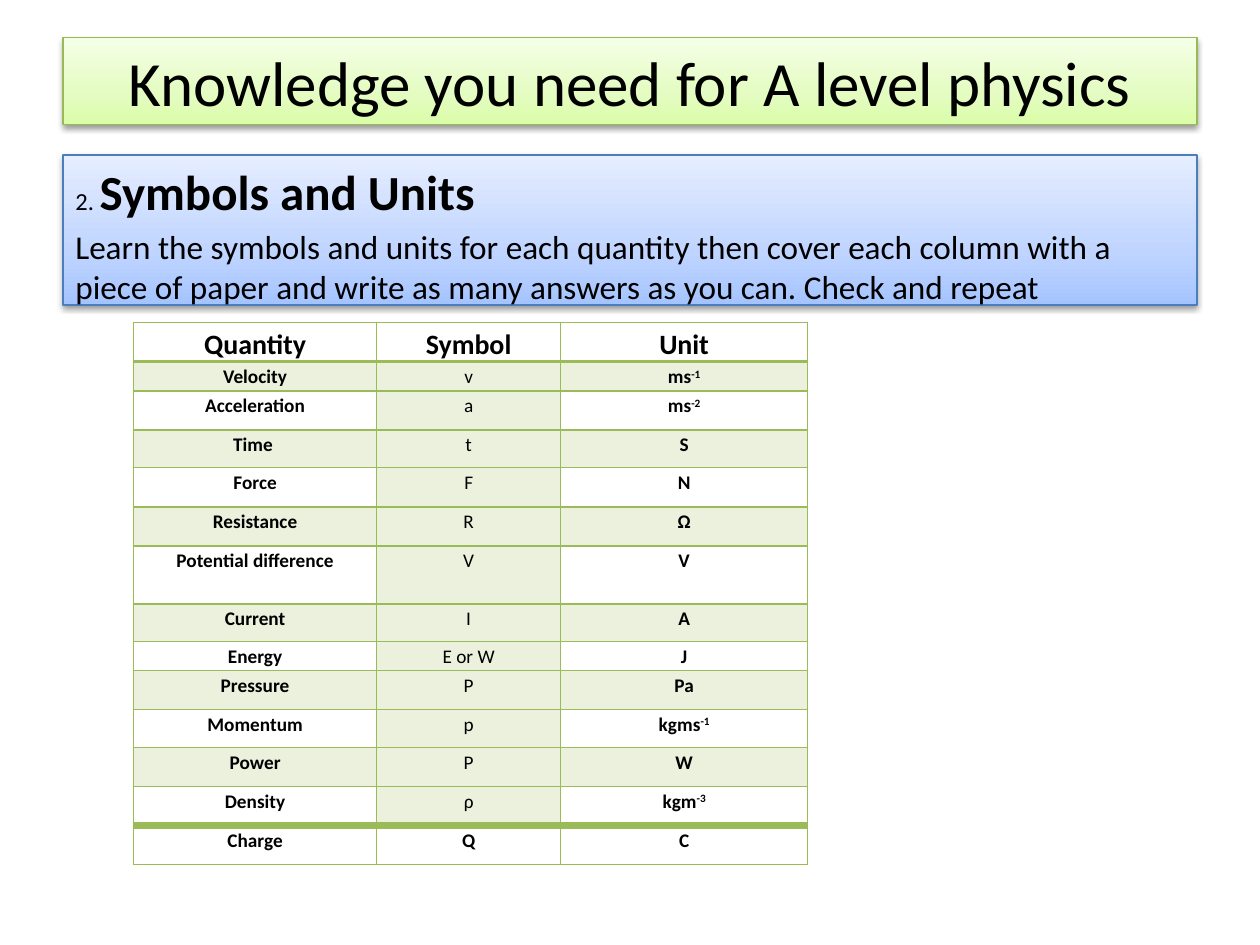
from lxml.etree import SubElement
from pptx import Presentation
from pptx.dml.color import RGBColor
from pptx.enum.shapes import MSO_SHAPE
from pptx.enum.text import MSO_ANCHOR, PP_ALIGN
from pptx.oxml import parse_xml
from pptx.oxml.ns import nsdecls, qn
from pptx.util import Inches, Pt

COLORS = {"text": "000000", "green": "9BBB59", "title_line": "98B955", "intro_line": "4B7EBC"}
TITLE_GRADIENT = [(0, "DAFDA7"), (35, "E4FCC2"), (100, "F5FFE7")]
INTRO_GRADIENT = [(0, "A4C4FF"), (35, "BFD4FF"), (100, "E6EEFF")]

TITLE = "Knowledge you need for A level physics"
TOPIC_NUMBER, TOPIC = "2. ", "Symbols and Units"
INSTRUCTIONS = ("Learn the symbols and units for each quantity then cover each column with a "
                "piece of paper and write as many answers as you can. Check and repeat")
ROWS = [
    ("Quantity", "Symbol", "Unit", 0.31),
    ("Velocity", "v", "ms^-1", 0.23),
    ("Acceleration", "a", "ms^-2", 0.31),
    ("Time ", "t", "S", 0.3),
    ("Force", "F", "N", 0.31),
    ("Resistance", "R", "Ω", 0.31),
    ("Potential difference", "V", "V", 0.46),
    ("Current", "I", "A", 0.3),
    ("Energy", "E or W", "J", 0.23),
    ("Pressure", "P", "Pa", 0.31),
    ("Momentum", "p", "kgms^-1", 0.3),
    ("Power", "P", "W", 0.31),
    ("Density", "ρ", "kgm^-3", 0.31),
    ("Charge", "Q", "C", 0.31),
]
COL_WIDTHS = [1.93, 1.46, 1.96]
LAST = len(ROWS) - 1


def add_text(p, text, size, bold=False, superscript=False):
    r = p.add_run()
    r.text = text
    r.font.name, r.font.size, r.font.bold = "Calibri", Pt(size), bold
    r.font.color.rgb = RGBColor.from_string(COLORS["text"])
    if superscript:
        r.font._element.set("baseline", "30000")


def add_panel(slide, top, height, gradient, line, anchor):
    sp = slide.shapes.add_shape(MSO_SHAPE.RECTANGLE, Inches(0.5), Inches(top),
                                Inches(9), Inches(height))
    sp.line.color.rgb = RGBColor.from_string(line)
    sp.line.width = Pt(0.75)
    stops = "".join(f'<a:gs pos="{pos * 1000}"><a:srgbClr val="{color}"/></a:gs>'
                    for pos, color in gradient)
    sp_pr = sp._element.spPr
    sp_pr.find(qn("a:ln")).addprevious(parse_xml(
        f'<a:gradFill {nsdecls("a")} rotWithShape="1"><a:gsLst>{stops}</a:gsLst>'
        '<a:lin ang="16200000" scaled="0"/></a:gradFill>'))
    sp_pr.append(parse_xml(
        f'<a:effectLst {nsdecls("a")}><a:outerShdw blurRad="{Pt(3.1)}" dist="{Pt(1.6)}" '
        'dir="5400000" rotWithShape="0"><a:srgbClr val="000000"><a:alpha val="38000"/>'
        '</a:srgbClr></a:outerShdw></a:effectLst>'))
    tf = sp.text_frame
    tf.word_wrap, tf.vertical_anchor = True, anchor
    return tf


def set_borders(cell, top, bottom):
    tc_pr = cell._tc.get_or_add_tcPr()
    for side, width in (("L", 1), ("R", 1), ("T", top), ("B", bottom)):
        ln = SubElement(tc_pr, qn(f"a:ln{side}"), w=str(Pt(width)))
        fill = SubElement(ln, qn("a:solidFill"))
        SubElement(fill, qn("a:srgbClr"), val=COLORS["green"])


def set_fill(cell, tinted):
    if not tinted:
        cell.fill.background()
        return
    cell.fill.solid()
    cell.fill.fore_color.rgb = RGBColor.from_string(COLORS["green"])
    color = cell._tc.tcPr.find(qn("a:solidFill")).find(qn("a:srgbClr"))
    SubElement(color, qn("a:alpha"), val="20000")


def fill_cell(cell, text, row, col):
    header, inner = row == 0, 0 < row < LAST
    cell.margin_left = cell.margin_right = Inches(0.07)
    cell.margin_top = cell.margin_bottom = 0
    set_borders(cell, {1: 2, LAST: 4}.get(row, 1), {0: 2, LAST - 1: 4}.get(row, 1))
    set_fill(cell, inner and (row % 2 == 1 or col == 1))
    p = cell.text_frame.paragraphs[0]
    p.alignment, p.line_spacing, p.space_after = PP_ALIGN.CENTER, 1.15, Pt(10)
    for i, part in enumerate(text.split("^")):
        add_text(p, part, 16 if header else 11, bold=not (inner and col == 1),
                 superscript=i == 1)


def add_units_table(slide):
    heights = [row[-1] for row in ROWS]
    table = slide.shapes.add_table(len(ROWS), len(COL_WIDTHS), Inches(1.06), Inches(2.56),
                                   Inches(sum(COL_WIDTHS)), Inches(sum(heights))).table
    table.first_row = table.horz_banding = False
    for column, width in zip(table.columns, COL_WIDTHS):
        column.width = Inches(width)
    for r, (*texts, height) in enumerate(ROWS):
        table.rows[r].height = Inches(height)
        for c, text in enumerate(texts):
            fill_cell(table.cell(r, c), text, r, c)


def main():
    """Build the symbols and units revision slide."""
    prs = Presentation()
    prs.slide_width, prs.slide_height = Inches(10), Inches(7.5)
    slide = prs.slides.add_slide(prs.slide_layouts[6])

    tf = add_panel(slide, 0.3, 0.69, TITLE_GRADIENT, COLORS["title_line"], MSO_ANCHOR.MIDDLE)
    p = tf.paragraphs[0]
    p.alignment = PP_ALIGN.CENTER
    add_text(p, TITLE, 36)

    tf = add_panel(slide, 1.23, 1.19, INTRO_GRADIENT, COLORS["intro_line"], MSO_ANCHOR.TOP)
    heading, body = tf.paragraphs[0], tf.add_paragraph()
    for p, gap in ((heading, 5.6), (body, 3.8)):
        p.alignment, p.space_before = PP_ALIGN.LEFT, Pt(gap)
    add_text(heading, TOPIC_NUMBER, 14)
    add_text(heading, TOPIC, 28, bold=True)
    add_text(body, INSTRUCTIONS, 19)

    add_units_table(slide)
    prs.save("out.pptx")


if __name__ == "__main__":
    main()
